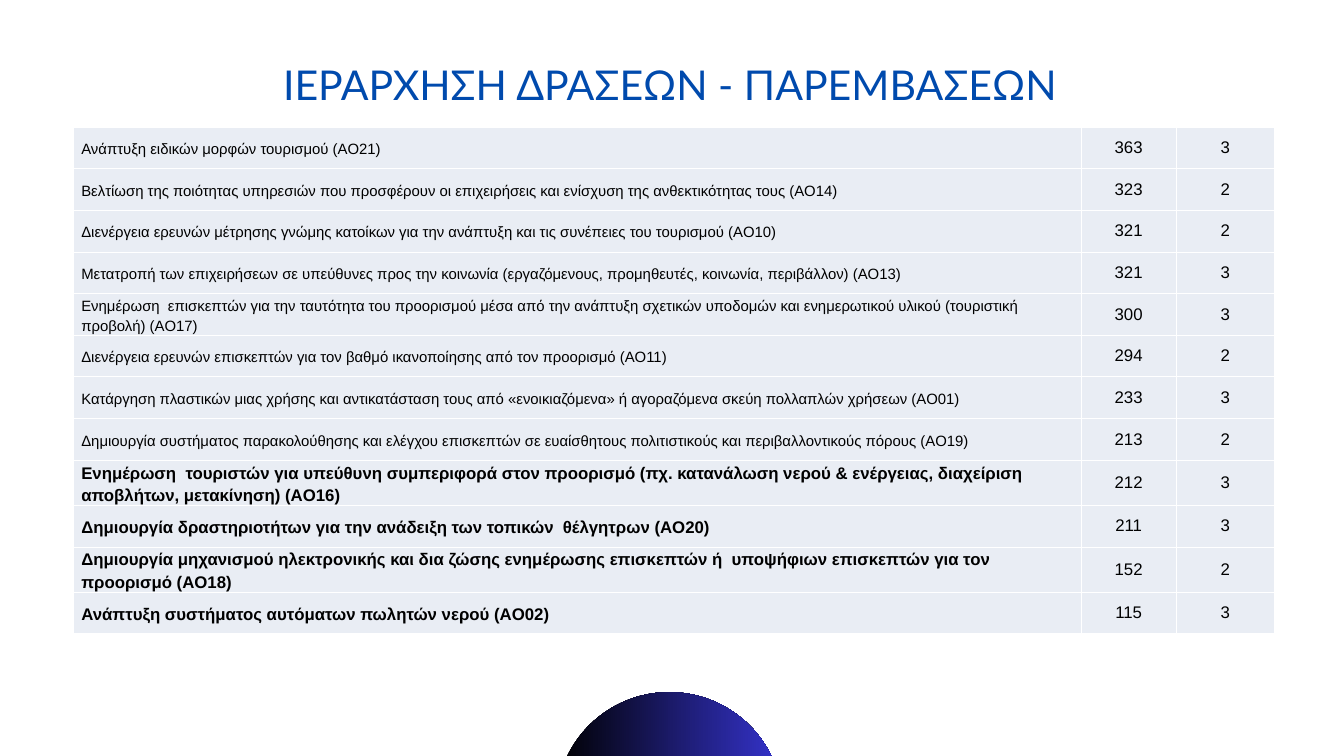
from dataclasses import dataclass

from lxml.etree import SubElement
from pptx import Presentation
from pptx.dml.color import RGBColor
from pptx.enum.shapes import MSO_SHAPE as Shape
from pptx.enum.text import MSO_ANCHOR as Anchor, PP_ALIGN as Align
from pptx.oxml.ns import qn
from pptx.util import Emu, Pt

EMU_PER_PX = 9144  # 100 px to the inch


@dataclass(frozen=True)
class Theme:
    title_font: str = "Lato"
    body_font: str = "Arial"
    title_color: str = "004AAD"
    text_color: str = "000000"
    cell_fill: str = "E9EDF4"
    border_color: str = "FFFFFF"
    gradient: tuple = ("000000", "3533CD")
    title_size: int = 44
    action_size: int = 16
    emphasis_size: int = 18
    score_size: int = 18
    border_width: int = 1


THEME = Theme()

COLUMN_WIDTHS = (1500, 141, 147)
ROW_HEIGHT = 62
ACTION_INDENT = 12

# Action, score, priority level, emphasised
ACTIONS = [
    ("Ανάπτυξη ειδικών μορφών τουρισμού (AO21)", 363, 3, False),
    ("Βελτίωση της ποιότητας υπηρεσιών που προσφέρουν οι επιχειρήσεις και ενίσχυση "
     "της ανθεκτικότητας τους (AO14)", 323, 2, False),
    ("Διενέργεια ερευνών μέτρησης γνώμης κατοίκων για την ανάπτυξη και τις συνέπειες "
     "του τουρισμού (AO10)", 321, 2, False),
    ("Μετατροπή των επιχειρήσεων σε υπεύθυνες προς την κοινωνία (εργαζόμενους, "
     "προμηθευτές, κοινωνία, περιβάλλον) (AO13)", 321, 3, False),
    ("Ενημέρωση  επισκεπτών για την ταυτότητα του προορισμού μέσα από την ανάπτυξη "
     "σχετικών υποδομών και ενημερωτικού υλικού (τουριστική προβολή) (AO17)", 300, 3, False),
    ("Διενέργεια ερευνών επισκεπτών για τον βαθμό ικανοποίησης από τον προορισμό (AO11)",
     294, 2, False),
    ("Κατάργηση πλαστικών μιας χρήσης και αντικατάσταση τους από «ενοικιαζόμενα» ή "
     "αγοραζόμενα σκεύη πολλαπλών χρήσεων (AO01)", 233, 3, False),
    ("Δημιουργία συστήματος παρακολούθησης και ελέγχου επισκεπτών σε ευαίσθητους "
     "πολιτιστικούς και περιβαλλοντικούς πόρους (AO19)", 213, 2, False),
    ("Ενημέρωση  τουριστών για υπεύθυνη συμπεριφορά στον προορισμό (πχ. κατανάλωση "
     "νερού & ενέργειας, διαχείριση αποβλήτων, μετακίνηση) (AO16)", 212, 3, True),
    ("Δημιουργία δραστηριοτήτων για την ανάδειξη των τοπικών  θέλγητρων (AO20)",
     211, 3, True),
    ("Δημιουργία μηχανισμού ηλεκτρονικής και δια ζώσης ενημέρωσης επισκεπτών ή  "
     "υποψήφιων επισκεπτών για τον προορισμό (AO18)", 152, 2, True),
    ("Ανάπτυξη συστήματος αυτόματων πωλητών νερού (AO02)", 115, 3, True),
]


def px(value):
    return Emu(value * EMU_PER_PX)


def rgb(color):
    return RGBColor.from_string(color)


def set_font(paragraph, name, size, color, bold=False):
    for run in paragraph.runs:
        run.font.name = name
        run.font.size = Pt(size)
        run.font.bold = bold
        run.font.color.rgb = rgb(color)


def add_title(slide, text, left, top, width, height):
    box = slide.shapes.add_textbox(px(left), px(top), px(width), px(height))
    box.text_frame.word_wrap = True
    box.text_frame.text = text
    paragraph = box.text_frame.paragraphs[0]
    paragraph.alignment = Align.CENTER
    set_font(paragraph, THEME.title_font, THEME.title_size, THEME.title_color)


def style_cell(cell):
    """Set borders, fill, anchor and zero margins; borders must precede the fill."""
    properties = cell._tc.get_or_add_tcPr()
    for side in ("a:lnL", "a:lnR", "a:lnT", "a:lnB"):
        line = SubElement(properties, qn(side), w=str(Pt(THEME.border_width)))
        fill = SubElement(line, qn("a:solidFill"))
        SubElement(fill, qn("a:srgbClr"), val=THEME.border_color)
    cell.fill.solid()
    cell.fill.fore_color.rgb = rgb(THEME.cell_fill)
    cell.vertical_anchor = Anchor.MIDDLE
    cell.margin_left = cell.margin_right = cell.margin_top = cell.margin_bottom = 0


def add_ranking_table(slide, left, top):
    frame = slide.shapes.add_table(
        len(ACTIONS), len(COLUMN_WIDTHS), px(left), px(top),
        px(sum(COLUMN_WIDTHS)), px(ROW_HEIGHT * len(ACTIONS)))
    table = frame.table
    table.first_row = table.horz_banding = False
    for column, width in zip(table.columns, COLUMN_WIDTHS):
        column.width = px(width)

    for row, (*values, emphasised) in zip(table.rows, ACTIONS):
        row.height = px(ROW_HEIGHT)
        for index, (cell, value) in enumerate(zip(row.cells, values)):
            style_cell(cell)
            cell.text_frame.text = str(value)
            paragraph = cell.text_frame.paragraphs[0]
            if index == 0:
                cell.margin_left = px(ACTION_INDENT)
                paragraph.line_spacing = 1.2
                size = THEME.emphasis_size if emphasised else THEME.action_size
            else:
                paragraph.alignment = Align.CENTER
                size = THEME.score_size
            set_font(paragraph, THEME.body_font, size, THEME.text_color,
                     bold=emphasised and index == 0)


def add_gradient_circle(slide, left, top, diameter):
    circle = slide.shapes.add_shape(
        Shape.OVAL, px(left), px(top), px(diameter), px(diameter))
    circle.shadow.inherit = False
    circle.line.fill.background()
    circle.fill.gradient()
    circle.fill.gradient_angle = 0
    for stop, position, color in zip(circle.fill.gradient_stops, (0, 1), THEME.gradient):
        stop.position = position
        stop.color.rgb = rgb(color)


def main():
    presentation = Presentation()
    presentation.slide_width = px(2000)
    presentation.slide_height = px(1125)
    slide = presentation.slides.add_slide(presentation.slide_layouts[6])
    add_ranking_table(slide, 109, 189)
    add_title(slide, "ΙΕΡΑΡΧΗΣΗ ΔΡΑΣΕΩΝ - ΠΑΡΕΜΒΑΣΕΩΝ", 64, 83, 1867, 125)
    add_gradient_circle(slide, 827, 1030, 338)
    presentation.save("out.pptx")


if __name__ == "__main__":
    main()
